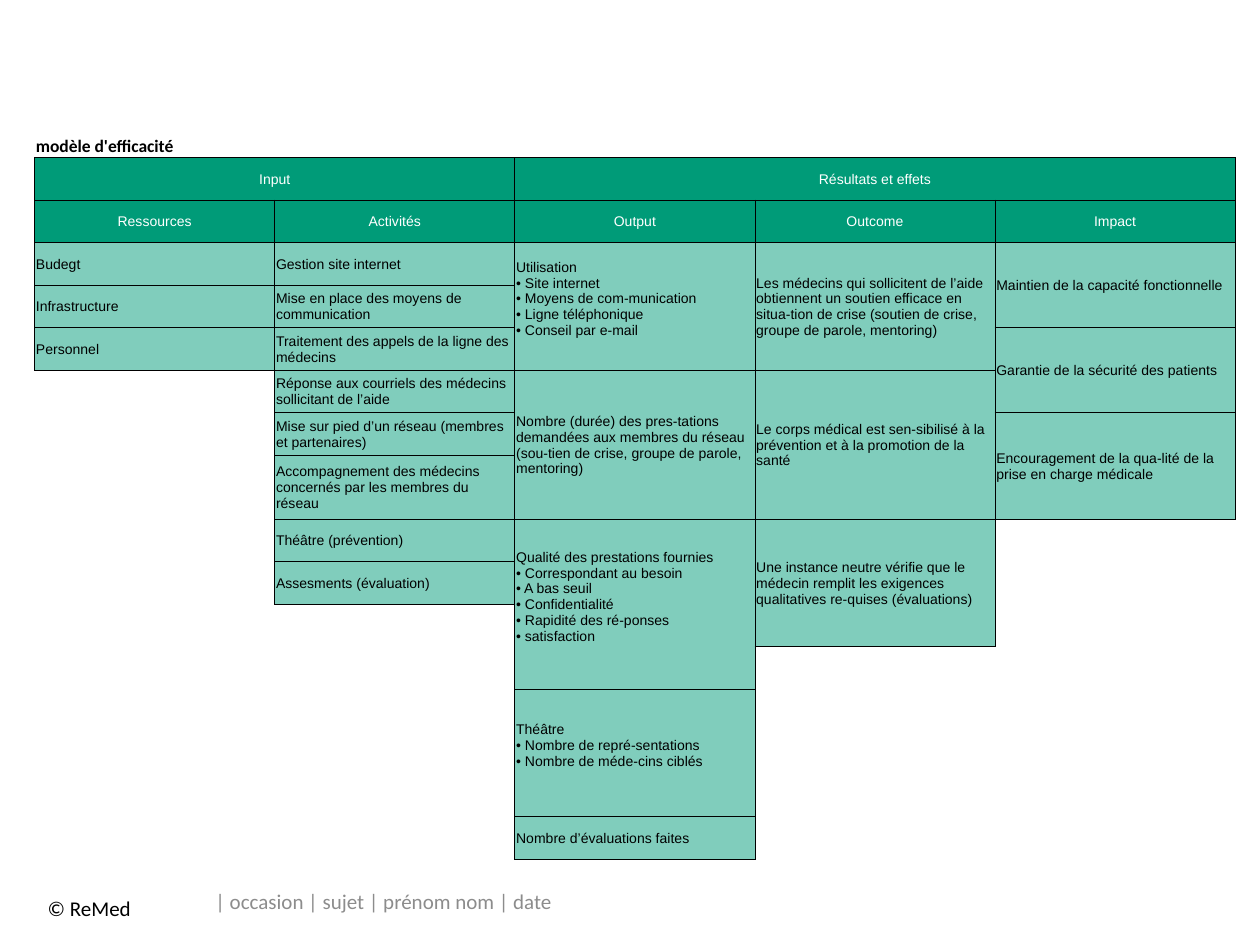
"""Build a slide with an effectiveness model table and a footer."""
import lxml.etree
import pptx
import pptx.dml.color
import pptx.enum.text
import pptx.oxml.ns
import pptx.util

Pt = pptx.util.Pt
RGBColor = pptx.dml.color.RGBColor
PP_ALIGN = pptx.enum.text.PP_ALIGN
MSO_ANCHOR = pptx.enum.text.MSO_ANCHOR
qn = pptx.oxml.ns.qn

BLACK = RGBColor(0x00, 0x00, 0x00)
WHITE = RGBColor(0xFF, 0xFF, 0xFF)
GREY = RGBColor(0x8C, 0x8C, 0x8C)
GREEN = RGBColor(0x00, 0x9B, 0x78)
MINT = RGBColor(0x80, 0xCD, 0xBC)
NO_STYLE = "{2D5ABB26-0587-4C30-8999-92F81FD0307C}"

TITLE = "modèle d'efficacité"
GROUPS = [("Input", 0, 2), ("Résultats et effets", 2, 3)]
COLUMNS = [
    ("Ressources", [("Budegt", 1), ("Infrastructure", 1), ("Personnel", 1)]),
    ("Activités", [
        ("Gestion site internet", 1),
        ("Mise en place des moyens de communication", 1),
        ("Traitement des appels de la ligne des médecins", 1),
        ("Réponse aux courriels des médecins sollicitant de l’aide", 1),
        ("Mise sur pied d’un réseau (membres et partenaires)", 1),
        ("Accompagnement des médecins concernés par les membres du réseau", 1),
        ("Théâtre (prévention)", 1),
        ("Assesments (évaluation)", 1),
    ]),
    ("Output", [
        ("Utilisation\v• Site internet\v• Moyens de com-munication\v"
         "• Ligne téléphonique\v• Conseil par e-mail", 3),
        ("Nombre (durée) des pres-tations demandées aux membres du réseau "
         "(sou-tien de crise, groupe de parole, mentoring)", 3),
        ("Qualité des prestations fournies\v• Correspondant au besoin\v• A bas seuil\v"
         "• Confidentialité\v• Rapidité des ré-ponses\v• satisfaction", 4),
        ("Théâtre\v• Nombre de repré-sentations\v• Nombre de méde-cins ciblés", 3),
        ("Nombre d’évaluations faites", 1),
    ]),
    ("Outcome", [
        ("Les médecins qui sollicitent de l’aide obtiennent un soutien efficace en "
         "situa-tion de crise (soutien de crise, groupe de parole, mentoring)", 3),
        ("Le corps médical est sen-sibilisé à la prévention et à la promotion de la santé", 3),
        ("Une instance neutre vérifie que le médecin remplit les exigences "
         "qualitatives re-quises (évaluations)", 3),
    ]),
    ("Impact", [
        ("Maintien de la capacité fonctionnelle", 2),
        ("Garantie de la sécurité des patients", 2),
        ("Encouragement de la qua-lité de la prise en charge médicale", 2),
    ]),
]
FOOTERS = [
    ("| occasion | sujet | prénom nom | date", (116, 500.4, 358, 28.8), GREY, MSO_ANCHOR.MIDDLE),
    ("© ReMed", (20.2, 508.3, 96.5, 21.8), BLACK, MSO_ANCHOR.TOP),
]

TABLE_LEFT, TABLE_TOP = 19.8, 65.7
COLUMN_WIDTH, ROW_HEIGHT, TALL_HEIGHT = 137.2, 24.3, 36.6
ROW_COUNT, TALL_ROW, FIRST_BODY_ROW = 17, 8, 3
INSET, LIST_BOTTOM_INSET = 0.72, 9.2


def format_text(text_frame, size, color, font_name, bold=False, alignment=PP_ALIGN.LEFT):
    for paragraph in text_frame.paragraphs:
        paragraph.alignment = alignment
        for run in paragraph.runs:
            run.font.size = Pt(size)
            run.font.name = font_name
            run.font.bold = bold
            run.font.color.rgb = color


def add_borders(cell):
    properties = cell._tc.get_or_add_tcPr()
    for side in ("a:lnL", "a:lnR", "a:lnT", "a:lnB"):
        line = lxml.etree.SubElement(properties, qn(side), w=str(Pt(0.5)))
        fill = lxml.etree.SubElement(line, qn("a:solidFill"))
        lxml.etree.SubElement(fill, qn("a:srgbClr"), val=str(BLACK))


def fill_block(table, text, row, column, row_span=1, column_span=1, header=False):
    fill_color = GREEN if header else MINT
    for row_index in range(row, row + row_span):
        for column_index in range(column, column + column_span):
            covered = table.cell(row_index, column_index)
            add_borders(covered)
            covered.fill.solid()
            covered.fill.fore_color.rgb = fill_color
    cell = table.cell(row, column)
    if row_span * column_span > 1:
        cell.merge(table.cell(row + row_span - 1, column + column_span - 1))
    cell.text_frame.text = text
    cell.vertical_anchor = MSO_ANCHOR.MIDDLE
    if "\v" in text:
        cell.margin_bottom = Pt(LIST_BOTTOM_INSET)
    format_text(cell.text_frame, 8, WHITE if header else BLACK, "Arial",
                alignment=PP_ALIGN.CENTER if header else PP_ALIGN.LEFT)


def add_model_table(slide):
    heights = [TALL_HEIGHT if row == TALL_ROW else ROW_HEIGHT for row in range(ROW_COUNT)]
    table = slide.shapes.add_table(
        ROW_COUNT, len(COLUMNS), Pt(TABLE_LEFT), Pt(TABLE_TOP),
        Pt(COLUMN_WIDTH * len(COLUMNS)), Pt(sum(heights))).table
    table._tbl.tblPr.find(qn("a:tableStyleId")).text = NO_STYLE
    table.first_row = table.horz_banding = False
    for column in table.columns:
        column.width = Pt(COLUMN_WIDTH)
    for row, height in zip(table.rows, heights):
        row.height = Pt(height)
    for cell in table.iter_cells():
        cell.margin_left = cell.margin_right = cell.margin_top = Pt(INSET)
        cell.margin_bottom = 0

    title_cell = table.cell(0, 0)
    title_cell.text_frame.text = TITLE
    title_cell.vertical_anchor = MSO_ANCHOR.BOTTOM
    format_text(title_cell.text_frame, 10, BLACK, "Calibri", bold=True)
    for text, column, span in GROUPS:
        fill_block(table, text, 1, column, column_span=span, header=True)
    for column, (heading, blocks) in enumerate(COLUMNS):
        fill_block(table, heading, 2, column, header=True)
        row = FIRST_BODY_ROW
        for text, span in blocks:
            fill_block(table, text, row, column, row_span=span)
            row += span


def add_footers(slide):
    for text, position, color, anchor in FOOTERS:
        text_frame = slide.shapes.add_textbox(*map(Pt, position)).text_frame
        text_frame.word_wrap = True
        text_frame.vertical_anchor = anchor
        text_frame.text = text
        format_text(text_frame, 12, color, "Calibri")


def main():
    presentation = pptx.Presentation()
    presentation.slide_width, presentation.slide_height = Pt(720), Pt(540)
    slide = presentation.slides.add_slide(presentation.slide_layouts[6])
    add_footers(slide)
    add_model_table(slide)
    presentation.save("out.pptx")


if __name__ == "__main__":
    main()
